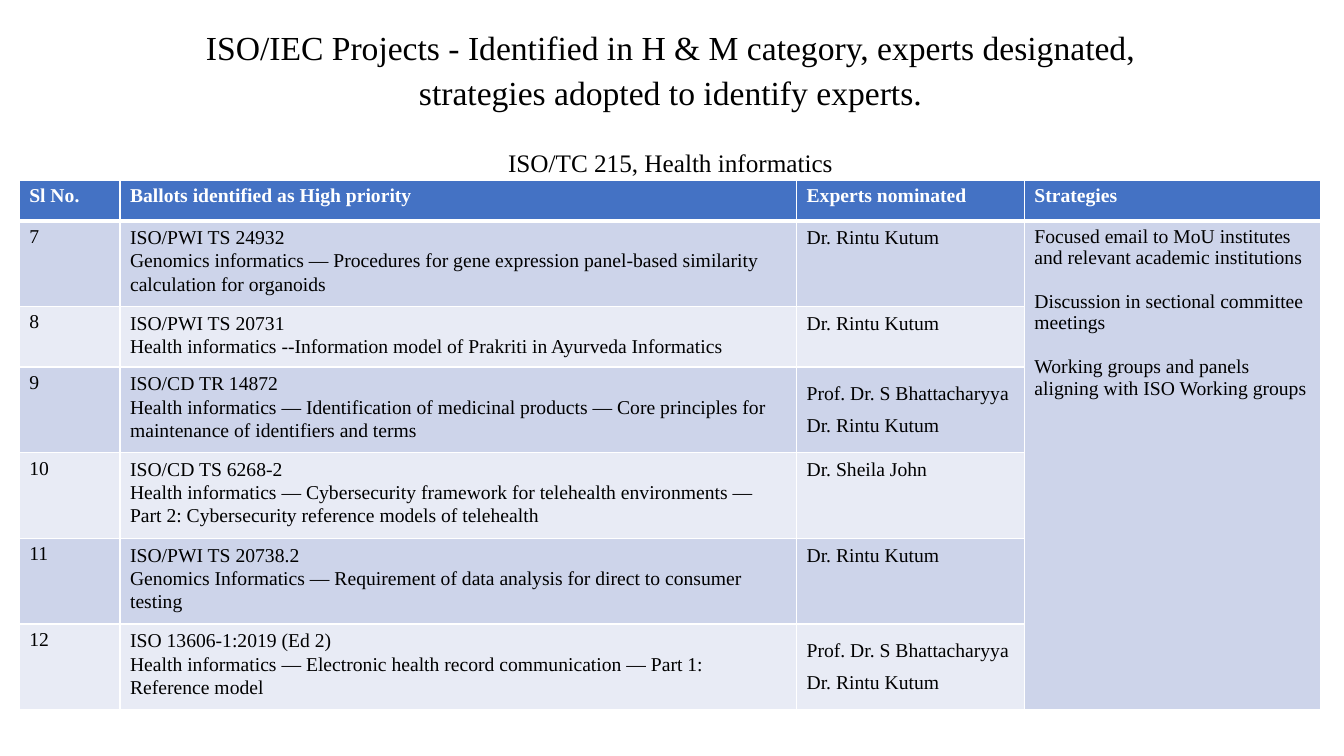
from lxml import etree
from pptx import Presentation
from pptx.dml.color import RGBColor
from pptx.enum.text import PP_ALIGN
from pptx.oxml.ns import qn
from pptx.util import Inches, Pt

CENTER = PP_ALIGN.CENTER
FONT = "Times New Roman"
BLACK = RGBColor(0x00, 0x00, 0x00)
WHITE = RGBColor(0xFF, 0xFF, 0xFF)
HEADER_BLUE = RGBColor(0x44, 0x72, 0xC4)
BANDS = (RGBColor(0xCD, 0xD4, 0xEA), RGBColor(0xE8, 0xEB, 0xF5))

COLUMN_WIDTHS = (1, 6.71, 2.26, 2.94)
ROW_HEIGHTS = (0.4, 0.85, 0.6, 0.85, 0.85, 0.85, 0.85)
HEADERS = ("Sl No.", "Ballots identified as High priority",
           "Experts nominated", "Strategies")
KUTUM = "Dr. Rintu Kutum"
BOTH_EXPERTS = "Prof. Dr. S Bhattacharyya\n" + KUTUM
FIRST_NUMBER = 7
BALLOTS = (
    ("ISO/PWI TS 24932\nGenomics informatics — Procedures for gene expression "
     "panel-based similarity calculation for organoids", KUTUM),
    ("ISO/PWI TS 20731\nHealth informatics --Information model of Prakriti in "
     "Ayurveda Informatics", KUTUM),
    ("ISO/CD TR 14872\nHealth informatics — Identification of medicinal products — "
     "Core principles for maintenance of identifiers and terms", BOTH_EXPERTS),
    ("ISO/CD TS 6268-2\nHealth informatics — Cybersecurity framework for telehealth "
     "environments — Part 2: Cybersecurity reference models of telehealth",
     "Dr. Sheila John"),
    ("ISO/PWI TS 20738.2\nGenomics Informatics — Requirement of data analysis for "
     "direct to consumer testing", KUTUM),
    ("ISO 13606-1:2019 (Ed 2)\nHealth informatics — Electronic health record "
     "communication — Part 1: Reference model", BOTH_EXPERTS),
)
STRATEGIES = (
    "Focused email to MoU institutes and relevant academic institutions",
    "Discussion in sectional committee meetings",
    "Working groups and panels aligning with ISO Working groups",
)


def write(p, text, size=14, color=BLACK, bold=False, align=None, spacing=None, before=0):
    p.text = text
    p.alignment = align
    p.line_spacing = spacing
    p.space_before = Pt(before)
    for r in p.runs:
        r.font.name = FONT
        r.font.size = Pt(size)
        r.font.bold = bold
        r.font.color.rgb = color


def style_cell(cell, fill, bottom=1):
    """Set the fill and white borders, with the bottom width in points."""
    cell.fill.solid()
    cell.fill.fore_color.rgb = fill
    tc_pr = cell._tc.get_or_add_tcPr()
    for i, (side, width) in enumerate((("lnL", 1), ("lnR", 1), ("lnT", 1), ("lnB", bottom))):
        ln = etree.Element(qn("a:" + side), w=str(Pt(width)))
        solid = etree.SubElement(ln, qn("a:solidFill"))
        etree.SubElement(solid, qn("a:srgbClr"), val=str(WHITE))
        tc_pr.insert(i, ln)


def add_title(slide, left, top, width, height):
    box = slide.shapes.add_textbox(Inches(left), Inches(top), Inches(width), Inches(height))
    tf = box.text_frame
    tf.word_wrap = True
    write(tf.paragraphs[0], "ISO/IEC Projects - Identified in H & M category, experts "
          "designated, strategies adopted to identify experts.",
          size=24, align=CENTER, spacing=1.1)
    write(tf.add_paragraph(), "ISO/TC 215, Health informatics",
          size=18, align=CENTER, spacing=1.1, before=23)


def add_ballot_table(slide, left, top):
    frame = slide.shapes.add_table(
        len(ROW_HEIGHTS), len(COLUMN_WIDTHS), Inches(left), Inches(top),
        Inches(sum(COLUMN_WIDTHS)), Inches(sum(ROW_HEIGHTS)))
    table = frame.table
    for column, width in zip(table.columns, COLUMN_WIDTHS):
        column.width = Inches(width)
    for row, height in zip(table.rows, ROW_HEIGHTS):
        row.height = Inches(height)

    # Header row
    for col, text in enumerate(HEADERS):
        cell = table.cell(0, col)
        style_cell(cell, HEADER_BLUE, bottom=3)
        write(cell.text_frame.paragraphs[0], text, color=WHITE, bold=True)

    # Ballots and experts
    for i, (ballot, experts) in enumerate(BALLOTS):
        expert_spacing = 1.5 if "\n" in experts else 1.07
        entries = ((str(FIRST_NUMBER + i), None), (ballot, 1.07), (experts, expert_spacing))
        for col, (text, spacing) in enumerate(entries):
            cell = table.cell(i + 1, col)
            style_cell(cell, BANDS[i % 2])
            write(cell.text_frame.paragraphs[0], text, spacing=spacing)

    # Strategies, merged down the last column
    last = len(COLUMN_WIDTHS) - 1
    cell = table.cell(1, last)
    cell.merge(table.cell(len(BALLOTS), last))
    style_cell(cell, BANDS[0])
    tf = cell.text_frame
    for i, text in enumerate(STRATEGIES):
        p = tf.add_paragraph() if i else tf.paragraphs[0]
        write(p, text, before=15.5 if i else 0)


def main():
    prs = Presentation()
    prs.slide_width, prs.slide_height = Inches(13.33), Inches(7.5)
    slide = prs.slides.add_slide(prs.slide_layouts[6])
    add_title(slide, 1.94, 0.18, 9.42, 1.52)
    add_ballot_table(slide, 0.19, 1.79)
    prs.save("out.pptx")


if __name__ == "__main__":
    main()
